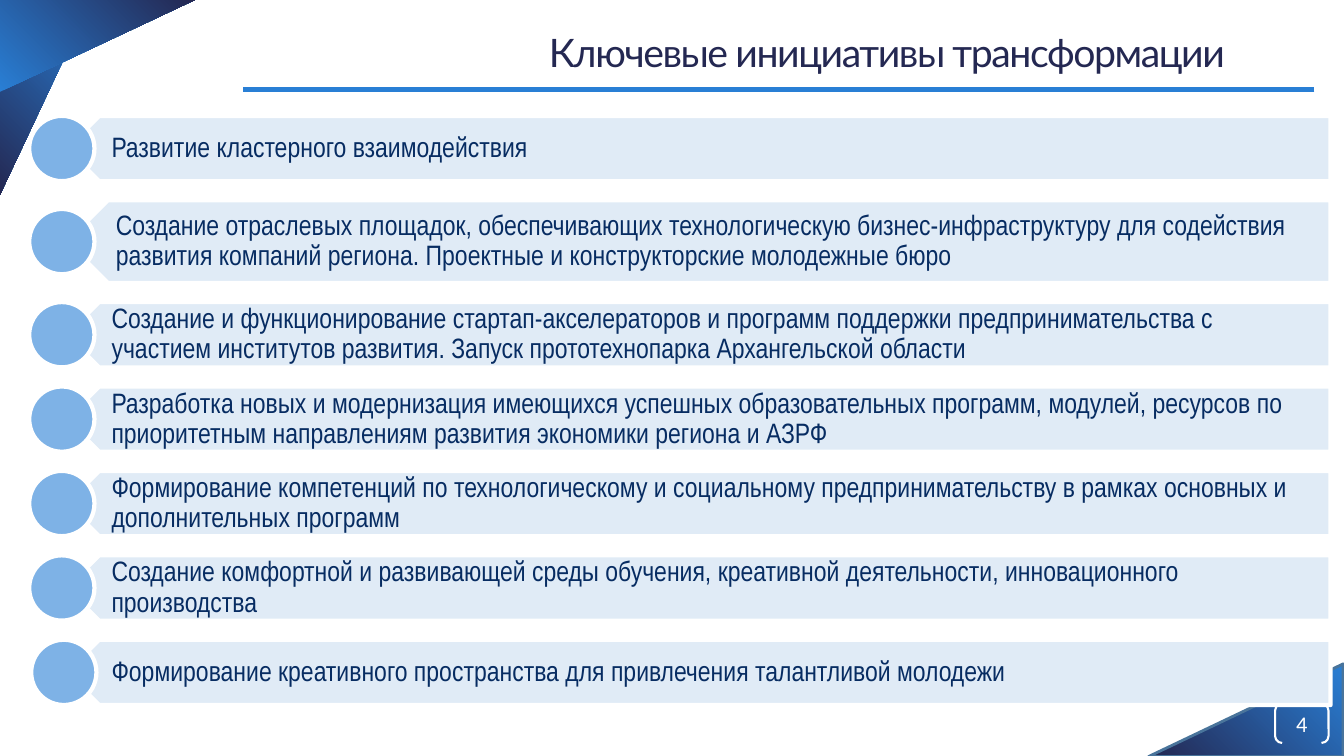
"""Build the slide of key initiatives as a column of marked bands."""
from dataclasses import dataclass
from typing import Any, Optional

from lxml import etree
from pptx import Presentation
from pptx import util as u
from pptx.dml.color import RGBColor
from pptx.enum import shapes, text
from pptx.oxml import ns

Pt = u.Pt
NAVY = RGBColor(0x24, 0x28, 0x52)
BLUE = RGBColor(0x29, 0x7F, 0xD5)
TEAL = RGBColor(0x49, 0x74, 0x9B)
PALE = RGBColor(0xE0, 0xEB, 0xF6)
SKY = RGBColor(0x7E, 0xB2, 0xE6)
INK = RGBColor(0x07, 0x2C, 0x62)
WHITE = RGBColor(0xFF, 0xFF, 0xFF)

KIND = shapes.MSO_SHAPE
ALIGN = text.PP_ALIGN
MIDDLE = text.MSO_ANCHOR.MIDDLE
TOP, GAP, DOT = 82.8, 13.7, 46.6
BAND_LEFT, BAND_WIDTH = 47.5, 902.9


@dataclass(frozen=True)
class Box:
    left: float
    top: float
    width: float
    height: float

    def points(self) -> tuple:
        return tuple(Pt(n) for n in (self.left, self.top, self.width, self.height))


@dataclass(frozen=True)
class Wedge:
    box: Box
    turn: int
    flip: bool = False
    edge: Optional[RGBColor] = None


@dataclass(frozen=True)
class Item:
    label: str
    height: float = DOT
    dot_left: float = 20.9


WEDGES = [
    Wedge(Box(856.8, 437.8, 66.2, 139), 270, edge=TEAL),
    Wedge(Box(0, 0, 65.5, 139), 180, flip=True),
    Wedge(Box(36.7, -36.7, 65.5, 139), 90),
]
ITEMS = [
    Item("Развитие кластерного взаимодействия"),
    Item("Создание отраслевых площадок, обеспечивающих технологическую "
         "бизнес-инфраструктуру для содействия развития компаний региона. "
         "Проектные и конструкторские молодежные бюро", height=59),
    Item("Создание и функционирование стартап-акселераторов и программ поддержки "
         "предпринимательства с участием институтов развития. "
         "Запуск прототехнопарка Архангельской области"),
    Item("Разработка новых и модернизация имеющихся успешных образовательных "
         "программ, модулей, ресурсов по приоритетным направлениям развития "
         "экономики региона и АЗРФ"),
    Item("Формирование компетенций по технологическому и социальному "
         "предпринимательству в рамках основных и дополнительных программ"),
    Item("Создание комфортной и развивающей среды обучения, креативной "
         "деятельности, инновационного производства"),
    Item("Формирование креативного пространства для привлечения талантливой "
         "молодежи", dot_left=22.3),
]


def put(thing: Any, values: dict) -> None:
    for name, value in values.items():
        setattr(thing, name, value)


def write(shape: Any, words: str, font: dict, color: RGBColor,
          frame: dict, para: dict) -> Any:
    put(shape.text_frame, {"word_wrap": True, "vertical_anchor": MIDDLE, **frame})
    line = shape.text_frame.paragraphs[0]
    put(line, para)
    run = line.add_run()
    run.text = words
    put(run.font, font)
    run.font.color.rgb = color
    return run


def draw(slide: Any, kind: Any, box: Box, fill: Optional[RGBColor] = None,
         edge: Optional[RGBColor] = None, weight: float = 3, turn: int = 0) -> Any:
    shape = slide.shapes.add_shape(kind, *box.points())
    shape.shadow.inherit = False
    shape.rotation = turn
    if fill is None:
        shape.fill.background()
    else:
        shape.fill.solid()
        shape.fill.fore_color.rgb = fill
    if edge is None:
        shape.line.fill.background()
    else:
        shape.line.color.rgb = edge
        shape.line.width = Pt(weight)
    return shape


def add_wedge(slide: Any, wedge: Wedge) -> None:
    shape = draw(slide, KIND.RIGHT_TRIANGLE, wedge.box,
                 edge=wedge.edge, weight=2, turn=wedge.turn)
    shape.fill.gradient()
    shape.fill.gradient_angle = 135
    for stop, color in zip(shape.fill.gradient_stops, (BLUE, NAVY)):
        stop.color.rgb = color
    if wedge.flip:
        shape._element.spPr.xfrm.set("flipH", "1")


def add_rule(slide: Any) -> None:
    rule = slide.shapes.add_connector(
        shapes.MSO_CONNECTOR.STRAIGHT, Pt(938.9), Pt(64.1), Pt(173.5), Pt(64.1))
    rule.line.color.rgb = BLUE
    rule.line.width = Pt(3.75)
    etree.SubElement(rule._element.spPr, ns.qn("a:effectLst"))


def add_title(slide: Any) -> None:
    title = slide.shapes.title
    put(title, dict(zip(("left", "top", "width", "height"),
                        Box(173.5, 15.1, 708.5, 43.9).points())))
    run = write(title, "Ключевые инициативы трансформации",
                {"name": "Lato", "size": Pt(28)}, NAVY, {},
                {"alignment": ALIGN.RIGHT})
    run.font._element.set("spc", "-100")


def add_number(slide: Any) -> None:
    frame = draw(slide, KIND.DOUBLE_BRACKET, Box(910.8, 502.6, 38.2, 28.1),
                 edge=WHITE, weight=1.5)
    frame.adjustments[0] = 0.18
    sides = ("margin_left", "margin_top", "margin_right", "margin_bottom")
    write(frame, "4", {"name": "Calibri", "size": Pt(16)}, WHITE,
          dict.fromkeys(sides, Pt(0)), {"alignment": ALIGN.CENTER})


def add_item(slide: Any, item: Item, top: float) -> None:
    draw(slide, KIND.PENTAGON, Box(BAND_LEFT, top, BAND_WIDTH, item.height),
         PALE, WHITE, turn=180)
    inset = item.height / 4
    label = slide.shapes.add_textbox(
        *Box(BAND_LEFT + inset, top, BAND_WIDTH - inset, item.height).points())
    write(label, item.label, {"name": "Arial Narrow", "size": Pt(20)}, INK,
          {"margin_left": Pt(20.5), "margin_right": Pt(11.2),
           "margin_top": Pt(6), "margin_bottom": Pt(6)},
          {"alignment": ALIGN.LEFT, "line_spacing": 0.9})
    draw(slide, KIND.OVAL,
         Box(item.dot_left, top + (item.height - DOT) / 2, DOT, DOT), SKY, WHITE)


def main() -> None:
    deck = Presentation()
    put(deck, {"slide_width": Pt(960), "slide_height": Pt(540)})
    slide = deck.slides.add_slide(deck.slide_layouts[5])
    for wedge in WEDGES:
        add_wedge(slide, wedge)
    add_rule(slide)
    add_title(slide)
    add_number(slide)
    top = TOP
    for item in ITEMS:
        add_item(slide, item, top)
        top += item.height + GAP
    deck.save("out.pptx")


if __name__ == "__main__":
    main()
